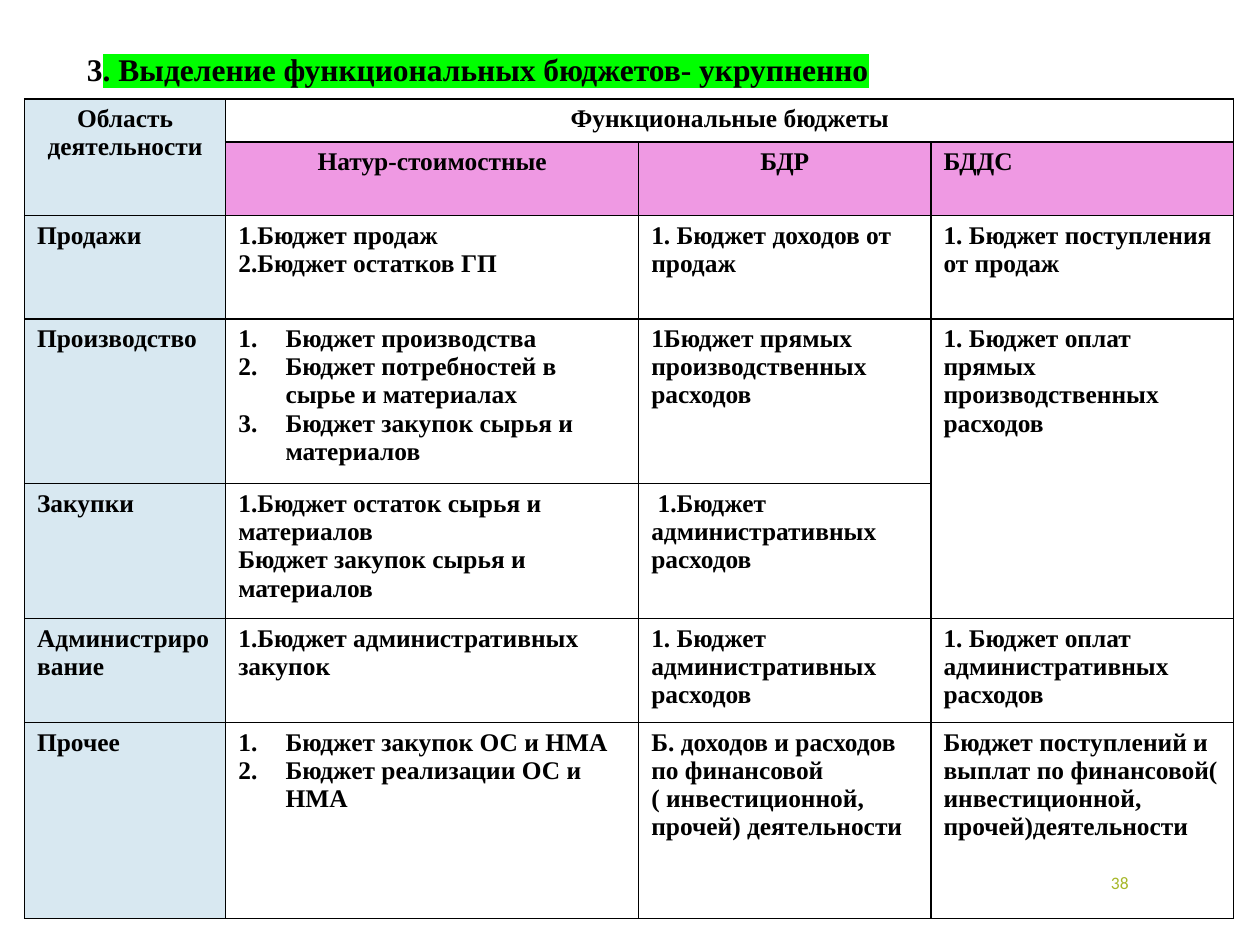
from lxml import etree
from pptx import Presentation
from pptx.dml.color import RGBColor
from pptx.enum.text import MSO_ANCHOR, MSO_AUTO_SIZE, PP_ALIGN
from pptx.oxml.ns import qn
from pptx.util import Pt

BLACK = RGBColor(0x00, 0x00, 0x00)
LIGHT_BLUE = RGBColor(0xD8, 0xE8, 0xF1)
PINK = RGBColor(0xEF, 0x99, 0xE3)
OLIVE = RGBColor(0xA6, 0xB7, 0x27)
HIGHLIGHT = RGBColor(0x00, 0xFF, 0x00)
SERIF = "Times New Roman"

COLUMN_WIDTHS = [115, 236, 167, 173]
ROW_HEIGHTS = [24, 40, 59, 94, 77, 59, 112]

# Each cell is a list of paragraphs; empty lists are covered by merged cells
ROWS = [
    [["Область деятельности"], ["Функциональные бюджеты"], [], []],
    [[], ["Натур-стоимостные"], ["БДР"], ["БДДС"]],
    [["Продажи"],
     ["1.Бюджет продаж", "2.Бюджет остатков ГП"],
     ["1. Бюджет доходов от продаж"],
     ["1. Бюджет поступления от продаж"]],
    [["Производство"],
     ["Бюджет производства", "Бюджет потребностей в сырье и материалах",
      "Бюджет закупок сырья и материалов"],
     ["1Бюджет прямых производственных расходов"],
     ["1. Бюджет оплат прямых производственных расходов"]],
    [["Закупки"],
     ["1.Бюджет остаток сырья и материалов", "Бюджет закупок сырья и материалов"],
     [" 1.Бюджет административных расходов"], []],
    [["Администрирование"],
     ["1.Бюджет административных закупок"],
     ["1. Бюджет административных расходов"],
     ["1. Бюджет оплат административных расходов"]],
    [["Прочее"],
     ["Бюджет закупок ОС и НМА", "Бюджет реализации ОС и НМА"],
     ["Б. доходов и расходов по финансовой ( инвестиционной, прочей) деятельности"],
     ["Бюджет поступлений и выплат по финансовой( инвестиционной, прочей)деятельности"]],
]
NUMBERED_CELLS = {(3, 1), (6, 1)}
CENTERED_CELLS = {(0, 0), (0, 1), (1, 1), (1, 2)}


def set_font(font, name, size, color, bold):
    font.name = name
    font.size = Pt(size)
    font.color.rgb = color
    font.bold = bold


def add_borders(cell):
    properties = cell._tc.get_or_add_tcPr()
    for index, side in enumerate(("lnL", "lnR", "lnT", "lnB")):
        line = etree.Element(qn(f"a:{side}"), w=str(Pt(1)))
        fill = etree.SubElement(line, qn("a:solidFill"))
        etree.SubElement(fill, qn("a:srgbClr"), val=str(BLACK))
        properties.insert(index, line)


presentation = Presentation()
presentation.slide_width = Pt(720)
presentation.slide_height = Pt(540)
slide = presentation.slides.add_slide(presentation.slide_layouts[5])

# Title with a highlighted second part
title = slide.shapes.title
title.left, title.top, title.width, title.height = Pt(42.5), Pt(25), Pt(466), Pt(29)
title_frame = title.text_frame
title_frame.word_wrap = False
title_frame.auto_size = MSO_AUTO_SIZE.SHAPE_TO_FIT_TEXT
title_frame.vertical_anchor = MSO_ANCHOR.TOP
paragraph = title_frame.paragraphs[0]
paragraph.alignment = PP_ALIGN.LEFT
set_font(paragraph.font, SERIF, 18, BLACK, True)
paragraph.add_run().text = "3"
marked_run = paragraph.add_run()
marked_run.text = ". Выделение функциональных бюджетов- укрупненно"
highlight = etree.SubElement(marked_run._r.get_or_add_rPr(), qn("a:highlight"))
etree.SubElement(highlight, qn("a:srgbClr"), val=str(HIGHLIGHT))

# Slide number
number_box = slide.shapes.add_textbox(Pt(551), Pt(490), Pt(101), Pt(29))
number_box.text_frame.word_wrap = True
number_box.text_frame.vertical_anchor = MSO_ANCHOR.MIDDLE
paragraph = number_box.text_frame.paragraphs[0]
paragraph.text = "38"
paragraph.alignment = PP_ALIGN.RIGHT
set_font(paragraph.font, "Calibri", 10, OLIVE, False)

# Budget table
table = slide.shapes.add_table(
    len(ROW_HEIGHTS), len(COLUMN_WIDTHS), Pt(14), Pt(56.5),
    Pt(sum(COLUMN_WIDTHS)), Pt(sum(ROW_HEIGHTS))).table
table.first_row = False
table.horz_banding = False
for column, width in zip(table.columns, COLUMN_WIDTHS):
    column.width = Pt(width)
for row, height in zip(table.rows, ROW_HEIGHTS):
    row.height = Pt(height)

for row_index, row_texts in enumerate(ROWS):
    for column_index, texts in enumerate(row_texts):
        position = (row_index, column_index)
        cell = table.cell(*position)
        add_borders(cell)

        # Blue first column, pink subheadings, no fill elsewhere
        if column_index == 0 or row_index == 1:
            cell.fill.solid()
            cell.fill.fore_color.rgb = LIGHT_BLUE if column_index == 0 else PINK
        else:
            cell.fill.background()

        cell.text_frame.text = "\n".join(texts)
        for paragraph in cell.text_frame.paragraphs:
            paragraph.alignment = (
                PP_ALIGN.CENTER if position in CENTERED_CELLS else PP_ALIGN.LEFT)
            set_font(paragraph.font, SERIF, 14.5, BLACK, True)
            if position in NUMBERED_CELLS:
                properties = paragraph._p.get_or_add_pPr()
                properties.set("marL", str(Pt(27)))
                properties.set("indent", str(Pt(-27)))
                numbering = etree.Element(qn("a:buAutoNum"), type="arabicPeriod")
                properties.insert(0, numbering)

# Merged cells
for start, end in [((0, 0), (1, 0)), ((0, 1), (0, 3)), ((3, 3), (4, 3))]:
    table.cell(*start).merge(table.cell(*end))

presentation.save("out.pptx")
